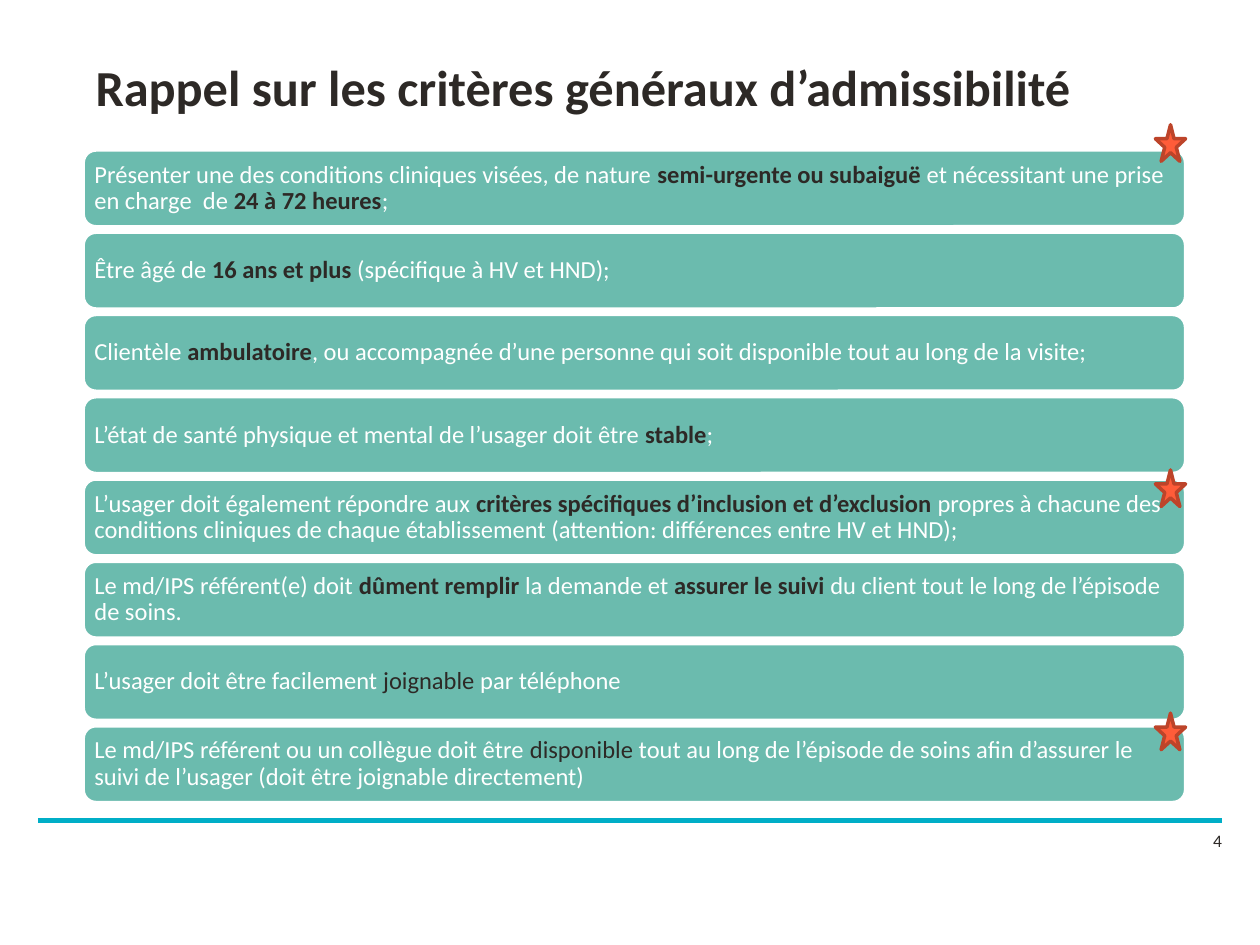
from dataclasses import dataclass

from lxml.etree import SubElement
from pptx import Presentation
from pptx.dml.color import RGBColor
from pptx.enum.shapes import MSO_CONNECTOR, MSO_SHAPE
from pptx.enum.text import MSO_ANCHOR, PP_ALIGN
from pptx.oxml.ns import qn
from pptx.util import Inches, Pt


@dataclass(frozen=True)
class Theme:
    font: str = "Calibri"
    dark: str = "2D2926"
    white: str = "FFFFFF"
    teal: str = "6BBBAE"
    rule: str = "00AEC7"
    star: str = "FF5C39"
    star_edge: str = "BD442A"
    title_size: float = 28.8
    body_size: float = 14
    number_size: float = 10
    outline: float = 2
    rule_width: float = 3


THEME = Theme()
PLAIN = {"color": THEME.white}
BOLD = {"color": THEME.dark, "bold": True}
DARK = {"color": THEME.dark}

CRITERIA = [
    [("Présenter une des conditions cliniques visées, de nature ", PLAIN),
     ("semi-urgente ou subaiguë ", BOLD),
     ("et nécessitant une prise en charge  de ", PLAIN),
     ("24 à 72 heures", BOLD), (";", PLAIN)],
    [("Être âgé de ", PLAIN), ("16 ans et plus ", BOLD),
     ("(spécifique à HV et HND);", PLAIN)],
    [("Clientèle ", PLAIN), ("ambulatoire", BOLD),
     (", ou accompagnée d’une personne qui soit disponible tout au long de la visite;", PLAIN)],
    [("L’état de santé physique et mental de l’usager doit être ", PLAIN),
     ("stable", BOLD), (";", PLAIN)],
    [("L’usager doit également répondre aux ", PLAIN),
     ("critères spécifiques d’inclusion et d’exclusion ", BOLD),
     ("propres à chacune des conditions cliniques de chaque établissement "
      "(attention: différences entre HV et HND);", PLAIN)],
    [("Le md/IPS référent(e) doit ", PLAIN), ("dûment remplir ", BOLD),
     ("la demande et ", PLAIN), ("assurer le suivi ", BOLD),
     ("du client tout le long de l’épisode de soins.", PLAIN)],
    [("L’usager doit être facilement ", PLAIN), ("joignable", DARK),
     (" par téléphone", PLAIN)],
    [("Le md/IPS référent ou un collègue doit être ", PLAIN), ("disponible", DARK),
     (" tout au long de l’épisode de soins afin d’assurer le suivi de l’usager "
      "(doit être joignable directement)", PLAIN)],
]
STAR_TOPS = [0.99, 5.66, 3.73]


def add_run(paragraph, text, size=THEME.body_size, color=THEME.dark, bold=False):
    run = paragraph.add_run()
    run.text = text
    run.font.name = THEME.font
    run.font.size = Pt(size)
    run.font.bold = bold
    run.font.color.rgb = RGBColor.from_string(color)


def add_outlined(slide, preset, box, fill, edge):
    shape = slide.shapes.add_shape(preset, *map(Inches, box))
    shape.shadow.inherit = False
    shape.fill.solid()
    shape.fill.fore_color.rgb = RGBColor.from_string(fill)
    shape.line.color.rgb = RGBColor.from_string(edge)
    shape.line.width = Pt(THEME.outline)
    return shape


def add_label(slide, box, text, anchor, **style):
    label = slide.shapes.add_textbox(*map(Inches, box))
    frame = label.text_frame
    frame.word_wrap = True
    frame.vertical_anchor = anchor
    add_run(frame.paragraphs[0], text, **style)


def add_criterion(slide, box, runs):
    bar = add_outlined(slide, MSO_SHAPE.ROUNDED_RECTANGLE, box, THEME.teal, THEME.white)
    frame = bar.text_frame
    frame.word_wrap = True
    frame.vertical_anchor = MSO_ANCHOR.MIDDLE
    frame.margin_left = frame.margin_right = Inches(0.06)
    frame.margin_top = frame.margin_bottom = Inches(0.06)
    paragraph = frame.paragraphs[0]
    paragraph.alignment = PP_ALIGN.LEFT
    paragraph.line_spacing = 0.9
    for text, style in runs:
        add_run(paragraph, text, **style)


def add_criteria(slide, box, bar_height=0.61):
    left, top, width, height = box
    pitch = (height - bar_height) / (len(CRITERIA) - 1)
    for index, runs in enumerate(CRITERIA):
        add_criterion(slide, (left, top + index * pitch, width, bar_height), runs)


def add_stars(slide, left):
    for top in STAR_TOPS:
        add_outlined(slide, MSO_SHAPE.STAR_5_POINT, (left, top, 0.24, 0.29),
                     THEME.star, THEME.star_edge)


def add_footer(slide, box):
    left, top, width, height = box
    rule = slide.shapes.add_connector(
        MSO_CONNECTOR.STRAIGHT, Inches(left), Inches(top), Inches(left + width), Inches(top))
    rule.line.color.rgb = RGBColor.from_string(THEME.rule)
    rule.line.width = Pt(THEME.rule_width)
    SubElement(rule.element.spPr, qn("a:effectLst"))
    add_label(slide, (left + width - 0.17, top + 0.03, 0.47, height), "4",
              MSO_ANCHOR.TOP, size=THEME.number_size)


def main():
    presentation = Presentation()
    presentation.slide_width = Inches(10)
    presentation.slide_height = Inches(7.5)
    slide = presentation.slides.add_slide(presentation.slide_layouts[6])
    add_footer(slide, (0.3, 6.51, 9.4, 0.4))
    add_label(slide, (0.66, 0.3, 8.75, 0.77),
              "Rappel sur les critères généraux d’admissibilité",
              MSO_ANCHOR.MIDDLE, size=THEME.title_size, bold=True)
    add_criteria(slide, (0.66, 1.19, 8.75, 5.18))
    add_stars(slide, 9.17)
    presentation.save("out.pptx")


if __name__ == "__main__":
    main()
